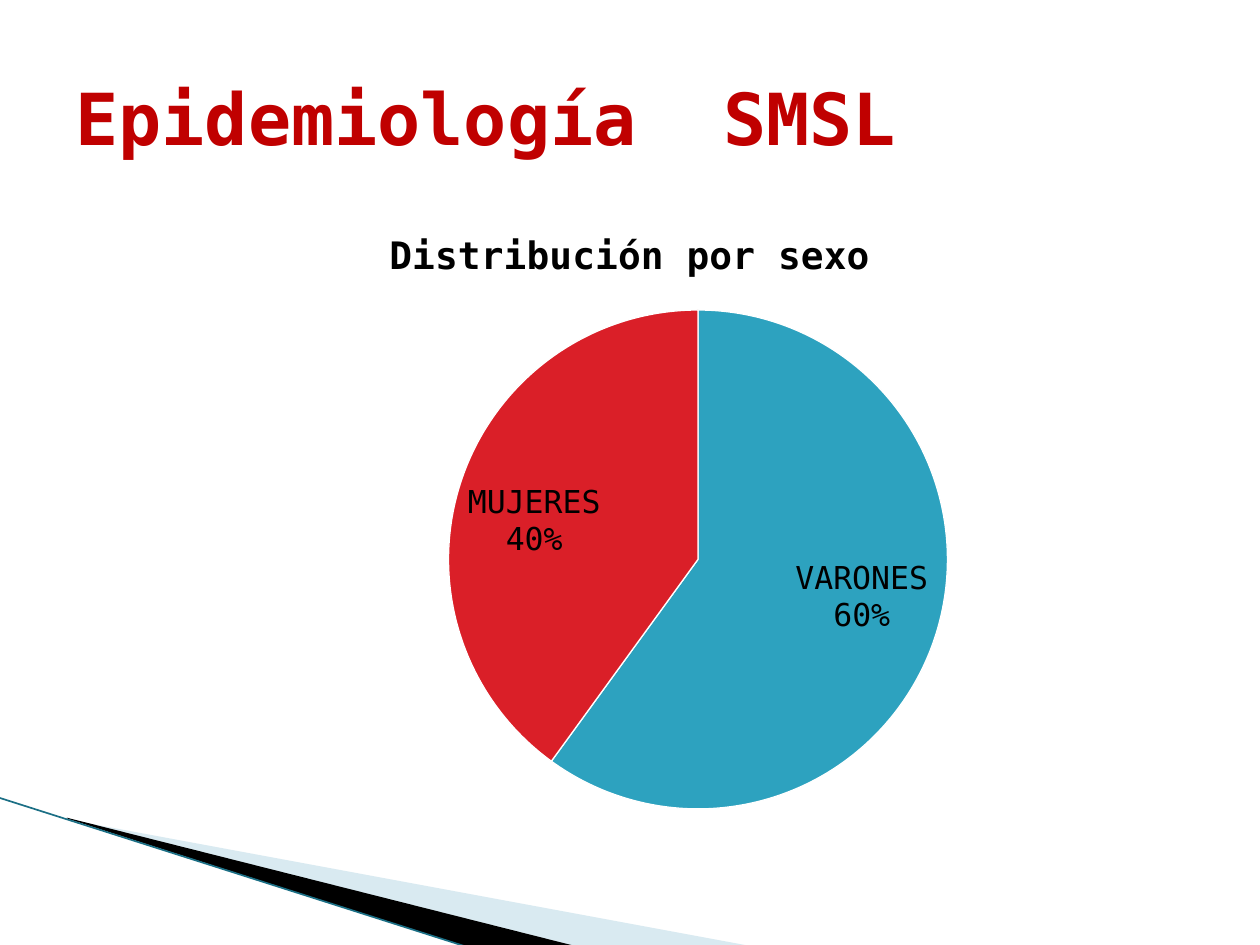
"""Build the SMSL epidemiology slide with its pie chart by sex."""
from dataclasses import dataclass

import lxml.etree
import pptx
import pptx.chart.data
import pptx.dml.color
import pptx.enum.chart
import pptx.enum.text
import pptx.oxml.ns
import pptx.util

Pt = pptx.util.Pt
qn = pptx.oxml.ns.qn
FONT = "DejaVu Sans Mono"


@dataclass
class Wedge:
    points: list[tuple[float, float]]
    color: str
    opacity: int = 100


@dataclass
class Slice:
    name: str
    value: int
    color: str


WEDGES = [
    Wedge([(39.6, 468.5), (428.4, 540.5), (328.3, 540.5), (39.6, 468)], "A0CBDC", 40),
    Wedge([(38.2, 467.3), (329, 540.7), (267.8, 541.4), (38.9, 468)], "000000"),
]
SLICES = [Slice("VARONES", 60, "2DA2BF"), Slice("MUJERES", 40, "DA1F28")]
PIE_LAYOUT = {"x": 0.34, "y": 0.17, "w": 0.44, "h": 0.8}


def rgb(color: str) -> pptx.dml.color.RGBColor:
    return pptx.dml.color.RGBColor.from_string(color)


def set_font(font, size: float, color: str, bold: bool = False) -> None:
    font.name, font.size, font.bold = FONT, Pt(size), bold
    font.color.rgb = rgb(color)


def add_wedge(slide, wedge: Wedge) -> None:
    start, *rest = [(Pt(x), Pt(y)) for x, y in wedge.points]
    builder = slide.shapes.build_freeform(*start, scale=1.0)
    builder.add_line_segments(rest, close=True)
    sp = builder.convert_to_shape()
    sp.shadow.inherit = False
    sp.fill.solid()
    sp.fill.fore_color.rgb = rgb(wedge.color)
    sp.line.fill.background()
    if wedge.opacity < 100:
        clr = sp._element.spPr.find(qn("a:solidFill"))[0]
        lxml.etree.SubElement(clr, qn("a:alpha"), val=str(wedge.opacity * 1000))


def add_edge(slide, color: str) -> None:
    line = slide.shapes.add_connector(1, Pt(-0.7), Pt(455.8), Pt(267.8), Pt(541.4))
    line.line.color.rgb = rgb(color)
    line.line.width = Pt(0.95)
    lxml.etree.SubElement(line._element.spPr, qn("a:effectLst"))


def add_title(slide, text: str) -> None:
    sp = slide.shapes.add_textbox(Pt(36), Pt(21.6), Pt(648), Pt(90))
    tf = sp.text_frame
    tf.word_wrap = True
    tf.vertical_anchor = pptx.enum.text.MSO_ANCHOR.MIDDLE
    tf.text = text
    set_font(tf.paragraphs[0].runs[0].font, 41, "C00000", True)


def set_plot_layout(chart, layout: dict[str, float]) -> None:
    area = chart._chartSpace.find(".//" + qn("c:plotArea"))
    for old in area.findall(qn("c:layout")):
        area.remove(old)
    holder = lxml.etree.Element(qn("c:layout"))
    manual = lxml.etree.SubElement(holder, qn("c:manualLayout"))
    values = {"layoutTarget": "inner", "xMode": "edge", "yMode": "edge", **layout}
    for tag, value in values.items():
        lxml.etree.SubElement(manual, qn(f"c:{tag}"), val=str(value))
    area.insert(0, holder)


def add_pie(slide, title: str, slices: list[Slice]) -> None:
    data = pptx.chart.data.CategoryChartData()
    data.categories = [s.name for s in slices]
    data.add_series(title, [s.value for s in slices])
    chart = slide.shapes.add_chart(
        pptx.enum.chart.XL_CHART_TYPE.PIE, Pt(36), Pt(116.6), Pt(648), Pt(356.4), data
    ).chart
    set_font(chart.font, 18, "000000")
    chart.has_legend = False
    chart.has_title = True
    tf = chart.chart_title.text_frame
    tf.text = title
    set_font(tf.paragraphs[0].runs[0].font, 21.6, "000000", True)
    set_plot_layout(chart, PIE_LAYOUT)
    plot = chart.plots[0]
    plot.vary_by_categories = True
    series = plot.series[0]
    for i, s in enumerate(slices):
        fmt = series.points[i].format
        fmt.fill.solid()
        fmt.fill.fore_color.rgb = rgb(s.color)
        fmt.line.color.rgb = rgb("FFFFFF")
        fmt.line.width = Pt(0.75)
    labels = series.data_labels
    labels.show_category_name = labels.show_percentage = True
    labels.show_value = False
    labels.number_format, labels.number_format_is_linked = "0%", False
    labels.position = pptx.enum.chart.XL_LABEL_POSITION.INSIDE_END
    set_font(labels.font, 18, "000000")
    separator = lxml.etree.Element(qn("c:separator"))
    separator.text = "\n"
    labels._element.find(qn("c:showBubbleSize")).addnext(separator)


def main() -> None:
    prs = pptx.Presentation()
    prs.slide_width, prs.slide_height = Pt(720), Pt(540)
    slide = prs.slides.add_slide(prs.slide_layouts[6])
    for wedge in WEDGES:
        add_wedge(slide, wedge)
    add_edge(slide, "1B6F85")
    add_pie(slide, "Distribución por sexo", SLICES)
    add_title(slide, "Epidemiología  SMSL")
    prs.save("out.pptx")


if __name__ == "__main__":
    main()
